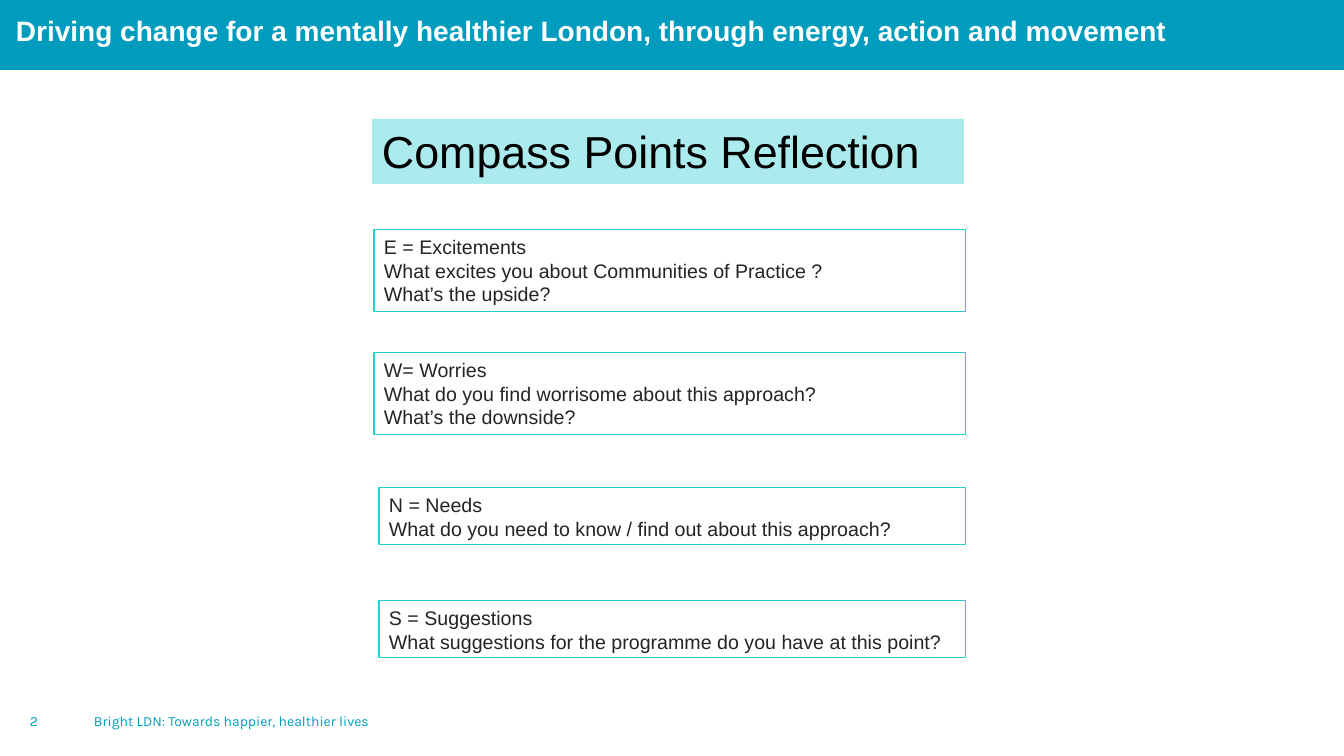
from pptx import Presentation
from pptx.dml.color import RGBColor
from pptx.enum.shapes import MSO_SHAPE
from pptx.enum.text import MSO_ANCHOR as Anchor, MSO_AUTO_SIZE as AutoSize, PP_ALIGN as Align
from pptx.util import Emu, Pt

EMU_PER_PX = 914400 / 100.8
BLUE = "009CBD"
TURQUOISE = "2CCCD3"
PALE = "ABEBED"
TEXT = "242424"

CARDS = [
    (374, 230, 82, ["E = Excitements",
                    "What excites you about Communities of Practice ?",
                    "What’s the upside?"]),
    (374, 353, 82, ["W= Worries",
                    "What do you find worrisome about this approach?",
                    "What’s the downside?"]),
    (379, 488, 57, ["N = Needs",
                    "What do you need to know / find out about this approach?"]),
    (379, 601, 57, ["S = Suggestions",
                    "What suggestions for the programme do you have at this point?"]),
]
CARD_RIGHT = 966


def px(value):
    return Emu(round(value * EMU_PER_PX))


def color(value):
    return RGBColor.from_string(value)


def write(shape, lines, size, ink, font="Arial", bold=False, anchor=Anchor.MIDDLE,
          spacing=None, inset=True, grow=False):
    frame = shape.text_frame
    frame.word_wrap = True
    frame.auto_size = AutoSize.SHAPE_TO_FIT_TEXT if grow else AutoSize.NONE
    frame.vertical_anchor = anchor
    if not inset:
        frame.margin_left = frame.margin_right = frame.margin_top = frame.margin_bottom = 0
    frame.text = "\n".join(lines)
    for paragraph in frame.paragraphs:
        paragraph.alignment = Align.LEFT
        paragraph.line_spacing = spacing
        paragraph.font.name = font
        paragraph.font.size = Pt(size)
        paragraph.font.bold = bold
        paragraph.font.color.rgb = color(ink)


def add_box(slide, left, top, width, height, fill=None, line=None):
    shape = slide.shapes.add_shape(MSO_SHAPE.RECTANGLE, px(left), px(top), px(width), px(height))
    shape.shadow.inherit = False
    if fill:
        shape.fill.solid()
        shape.fill.fore_color.rgb = color(fill)
    else:
        shape.fill.background()
    if line:
        shape.line.color.rgb = color(line)
        shape.line.width = Pt(0.75)
    else:
        shape.line.fill.background()
    return shape


def add_header(slide, text):
    title = slide.shapes.title
    title.left, title.top, title.width, title.height = px(16), px(7), px(1247), px(51)
    write(title, [text], 20, "FFFFFF", bold=True, spacing=0.9, inset=False)
    band = add_box(slide, 0, 0, 1344, 70, fill=BLUE)
    title.element.addprevious(band.element)


def add_footer(slide, left, width, text):
    footer = slide.shapes.add_textbox(px(left), px(701), px(width), px(40))
    write(footer, [text], 10, BLUE, font="Karla", inset=False)


def main():
    presentation = Presentation()
    presentation.slide_width, presentation.slide_height = px(1344), px(756)
    slide = presentation.slides.add_slide(presentation.slide_layouts[5])
    add_header(slide, "Driving change for a mentally healthier London, "
                      "through energy, action and movement")
    add_footer(slide, 94, 454, "Bright LDN: Towards happier, healthier lives")
    add_footer(slide, 30, 50, "2")
    heading = add_box(slide, 372, 119, 592, 65, fill=PALE)
    write(heading, ["Compass Points Reflection"], 32, "000000", anchor=Anchor.TOP, grow=True)
    for left, top, height, lines in CARDS:
        card = add_box(slide, left, top, CARD_RIGHT - left, height, line=TURQUOISE)
        write(card, lines, 14, TEXT, anchor=Anchor.TOP, grow=True)
    presentation.save("out.pptx")


if __name__ == "__main__":
    main()
